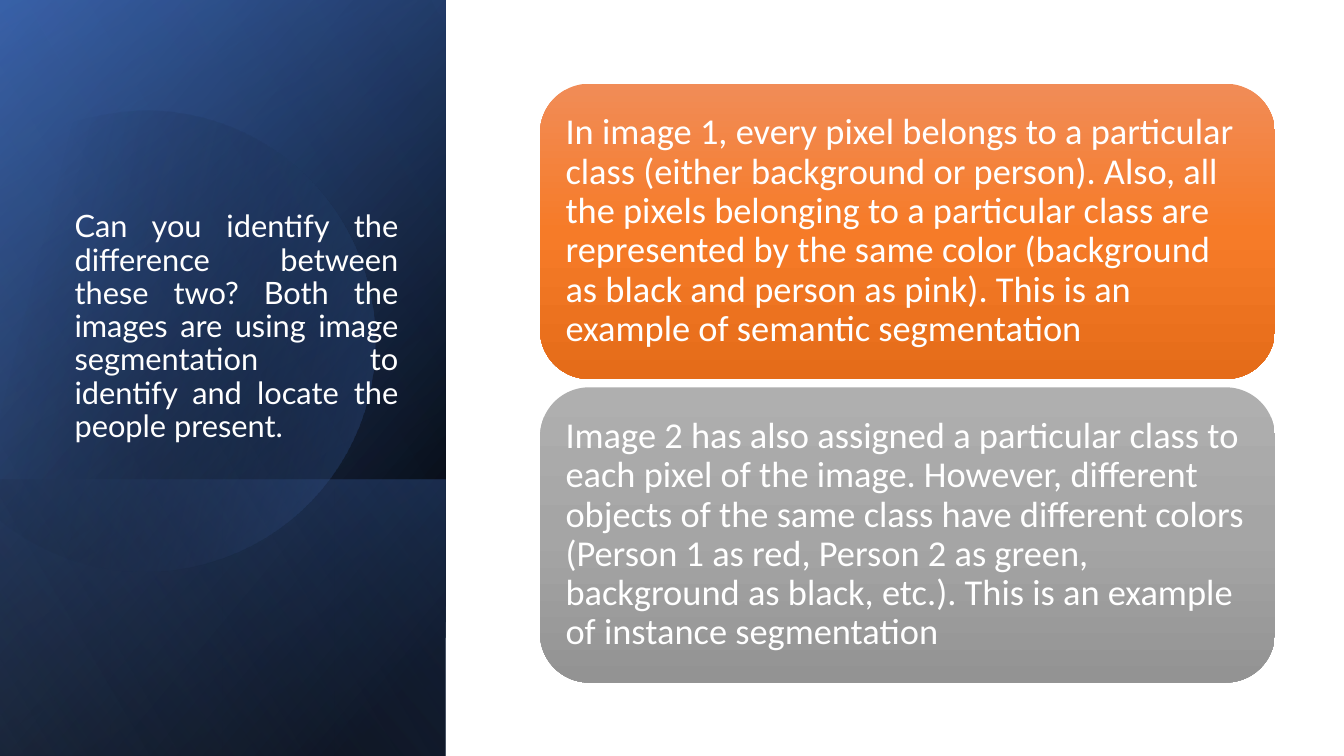
from math import cos, radians, sin

from lxml.etree import SubElement
from pptx import Presentation
from pptx.dml.color import RGBColor
from pptx.enum.shapes import MSO_SHAPE
from pptx.enum.text import MSO_ANCHOR, PP_ALIGN
from pptx.oxml.ns import qn
from pptx.util import Cm, Pt

BLACK = RGBColor(0x00, 0x00, 0x00)
WHITE = RGBColor(0xFF, 0xFF, 0xFF)
NAVY = RGBColor(0x2F, 0x55, 0x97)
BLUE = RGBColor(0x44, 0x72, 0xC4)
SKY = RGBColor(0x8F, 0xAA, 0xDC)
ORANGE = [RGBColor(0xF1, 0x8C, 0x57), RGBColor(0xF6, 0x7B, 0x28),
          RGBColor(0xE5, 0x6C, 0x19)]
GRAY = [RGBColor(0xAF, 0xAF, 0xAF), RGBColor(0xA5, 0xA5, 0xA5),
        RGBColor(0x93, 0x93, 0x93)]


def shade(shape, stops, angle):
    """Fill with (position %, colour, opacity %) stops, without line or shadow."""
    shape.shadow.inherit = False
    shape.line.fill.background()
    shape.fill.gradient()
    shape.fill.gradient_angle = 360 - angle
    ramp = shape._element.spPr.find(qn("a:gradFill")).find(qn("a:gsLst"))
    for old in list(ramp):
        ramp.remove(old)
    for pos, color, alpha in stops:
        stop = SubElement(ramp, qn("a:gs"), pos=str(pos * 1000))
        tint = SubElement(stop, qn("a:srgbClr"), val=str(color))
        SubElement(tint, qn("a:alpha"), val=str(alpha * 1000))


def write(shape, text, font, size, align, anchor, inset):
    frame = shape.text_frame
    frame.word_wrap = True
    frame.vertical_anchor = anchor
    frame.margin_left = frame.margin_right = Cm(inset[0])
    frame.margin_top = frame.margin_bottom = Cm(inset[1])
    para = frame.paragraphs[0]
    para.alignment = align
    para.line_spacing = 0.9
    run = para.add_run()
    run.text = text
    run.font.name = font
    run.font.size = Pt(size)
    run.font.color.rgb = WHITE


prs = Presentation()
prs.slide_width, prs.slide_height = Cm(33.87), Cm(19.05)
slide = prs.slides.add_slide(prs.slide_layouts[5])
shapes = slide.shapes

# Left panel: layered gradients, each turned a quarter and mirrored
full = (-3.91, 3.91, 19.05)
foot = (2.13, 9.96, 6.96)
layers = [
    (full, [(8, BLACK, 100), (100, NAVY, 100)], 50),
    (full, [(0, BLACK, 0), (99, BLUE, 46)], 30),
    (foot, [(2, BLUE, 29), (100, BLACK, 30)], 130),
    "disc",
    (full, [(0, BLACK, 0), (99, SKY, 11)], 120),
]

# Disc outline in cm: start point, then curves of three points and lines of one
start = (3.78, 2.79)
parts = [
    [(6.25, 2.84), (8.51, 4.5), (9.22, 6.99)],
    [(10.11, 10.08), (8.33, 13.28), (5.26, 14.17)],
    [(3.33, 14.73), (1.35, 14.25), (-0.08, 13.06)],
    [(-0.38, 12.78)], [(-0.38, 4.45)], [(0, 4.09)],
    [(0.58, 3.61), (1.27, 3.25), (2.03, 3.02)],
    [(2.62, 2.87), (3.2, 2.79), (3.78, 2.79)],
]
tilt = 16.1
turn = complex(cos(radians(tilt)), sin(radians(tilt)))
mid = complex(4.03, 8.5)

for layer in layers:
    if layer == "disc":
        dots = [complex(*start)]
        for part in parts:
            ends = [complex(*dot) for dot in part]
            if len(ends) == 1:
                dots += ends
                continue
            a, (b, c, d) = dots[-1], ends
            for step in range(1, 25):
                t = step / 24
                u = 1 - t
                dots.append(u**3 * a + 3 * u * u * t * b
                            + 3 * u * t * t * c + t**3 * d)
        dots = [mid + (dot - mid) * turn for dot in dots]
        dots = [(Cm(dot.real), Cm(dot.imag)) for dot in dots]
        pen = shapes.build_freeform(*dots[0])
        pen.add_line_segments(dots[1:], close=True)
        disc = pen.convert_to_shape()
        disc.rotation = 360 - tilt
        shade(disc, [(29, BLACK, 0), (100, BLUE, 43)], 30)
        continue
    (left, top, width), stops, angle = layer
    panel = shapes.add_shape(MSO_SHAPE.RECTANGLE, Cm(left), Cm(top),
                             Cm(width), Cm(11.23))
    panel.rotation = 90
    panel._element.spPr.find(qn("a:xfrm")).set("flipH", "1")
    shade(panel, stops, angle)

# Title, brought in front of the panel
title = shapes.title
shapes._spTree.append(title._element)
title.left, title.top = Cm(1.63), Cm(4.67)
title.width, title.height = Cm(8.66), Cm(6.65)
write(title,
      "Can you identify the difference between these two? Both the images are "
      "using image segmentation to identify and locate the people present.",
      font="Lato", size=22, align=PP_ALIGN.JUSTIFY, anchor=MSO_ANCHOR.BOTTOM,
      inset=(0.25, 0.13))

# Two answer cards
cards = [
    (ORANGE,
     "In image 1, every pixel belongs to a particular class (either background "
     "or person). Also, all the pixels belonging to a particular class are "
     "represented by the same color (background as black and person as pink). "
     "This is an example of semantic segmentation"),
    (GRAY,
     "Image 2 has also assigned a particular class to each pixel of the image. "
     "However, different objects of the same class have different colors "
     "(Person 1 as red, Person 2 as green, background as black, etc.). "
     "This is an example of instance segmentation"),
]
for row, (colors, text) in enumerate(cards):
    card = shapes.add_shape(MSO_SHAPE.ROUNDED_RECTANGLE, Cm(13.61),
                            Cm(2.11 + 7.65 * row), Cm(18.52), Cm(7.44))
    shade(card, [(50 * i, color, 100) for i, color in enumerate(colors)], 90)
    write(card, text, font="Calibri", size=26, align=PP_ALIGN.LEFT,
          anchor=MSO_ANCHOR.MIDDLE, inset=(0.28, 0.28))

prs.save("out.pptx")
